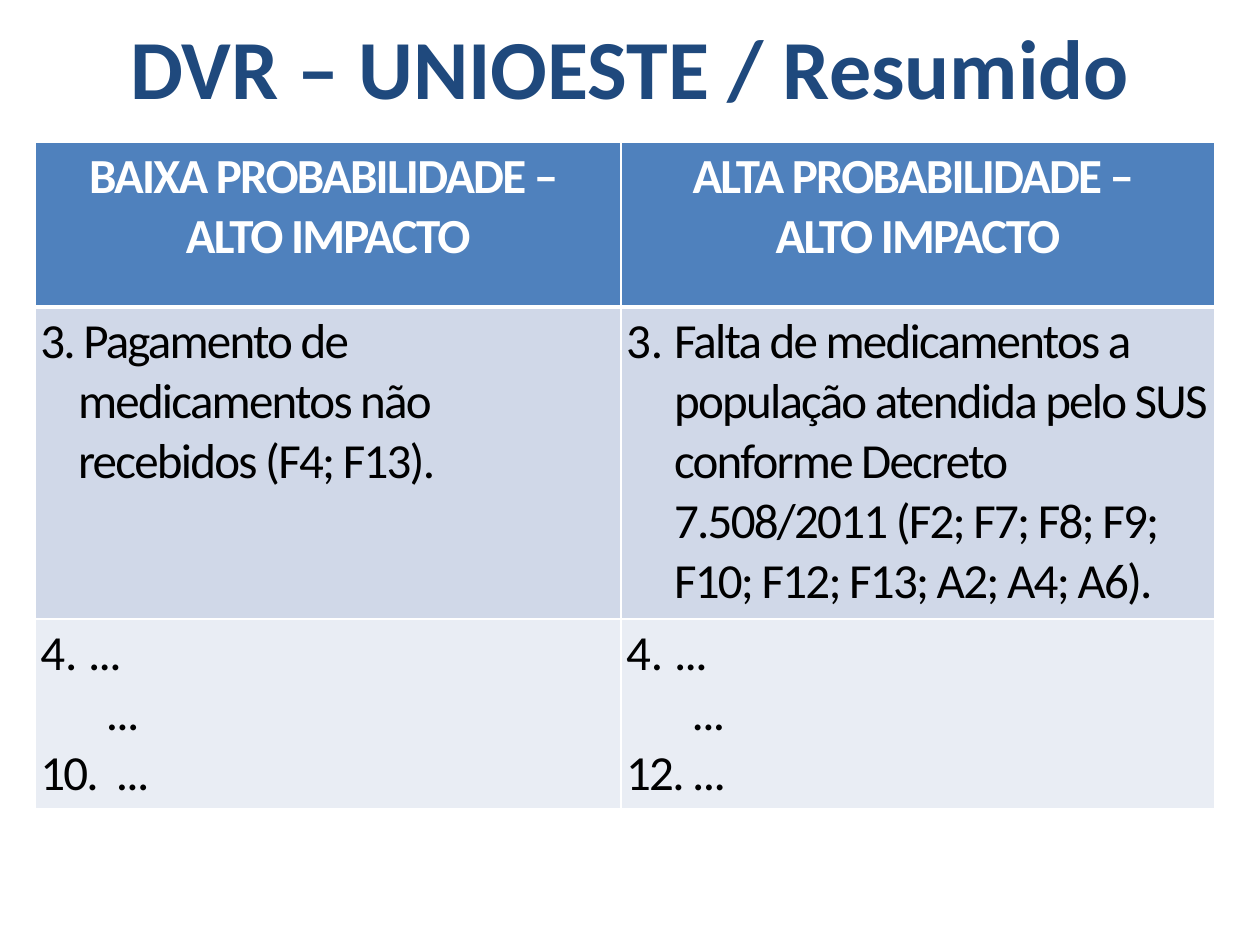
from lxml import etree
from pptx import Presentation
from pptx.dml.color import RGBColor
from pptx.enum.text import MSO_ANCHOR, PP_ALIGN
from pptx.oxml.ns import qn
from pptx.util import Inches, Pt

MIDDLE = MSO_ANCHOR.MIDDLE
LEFT, CENTER = PP_ALIGN.LEFT, PP_ALIGN.CENTER
WIDE, HIGH = Inches(10), Inches(7.5)
HUES = {"title": "1F497D", "head": "4F81BD", "odd": "D0D8E8",
        "even": "E9EDF4", "ink": "000000", "white": "FFFFFF"}


def write(para, text, size=28, hue="ink", bold=False, align=LEFT,
          left=0, hang=0, start=None, track=0):
    para.alignment = align
    props = para._p.get_or_add_pPr()
    props.set("marL", str(Inches(left)))
    props.set("indent", str(Inches(-hang)))
    if start:
        etree.SubElement(props, qn("a:buAutoNum"),
                         type="arabicPeriod", startAt=str(start))
    run = para.add_run()
    run.text = text
    font = run.font
    font.name, font.size, font.bold = "Calibri", Pt(size), bold
    font.color.rgb = RGBColor.from_string(HUES[hue])
    if track:
        run._r.get_or_add_rPr().set("spc", str(track))


class Deck:
    def __init__(self):
        self.prs = Presentation()
        self.prs.slide_width, self.prs.slide_height = WIDE, HIGH
        self.slide = self.prs.slides.add_slide(self.prs.slide_layouts[5])

    def title(self, text, x, y, w, h):
        box = self.slide.shapes.title
        box.left, box.top = int(x * WIDE), int(y * HIGH)
        box.width, box.height = int(w * WIDE), int(h * HIGH)
        box.text_frame.vertical_anchor = MIDDLE
        write(box.text_frame.paragraphs[0], text, size=48, hue="title",
              bold=True, align=CENTER)

    def edge(self, cell, widths):
        props = cell._tc.get_or_add_tcPr()
        for spot, (side, width) in enumerate(widths.items()):
            line = etree.Element(qn("a:ln" + side), w=str(Pt(width)))
            fill = etree.SubElement(line, qn("a:solidFill"))
            etree.SubElement(fill, qn("a:srgbClr"), val=HUES["white"])
            props.insert(spot, line)

    def cell(self, cell, lines, fill, widths, **style):
        cell.fill.solid()
        cell.fill.fore_color.rgb = RGBColor.from_string(HUES[fill])
        cell.margin_left = cell.margin_right = Inches(0.04)
        cell.margin_top = cell.margin_bottom = Inches(0.04)
        self.edge(cell, widths)
        frame = cell.text_frame
        for spot, (text, form) in enumerate(lines):
            para = frame.add_paragraph() if spot else frame.paragraphs[0]
            write(para, text, track=-100, **style, **form)

    def table(self, rows, x, y, cols, highs):
        grid = self.slide.shapes.add_table(
            len(rows), len(cols), int(x * WIDE), int(y * HIGH),
            int(sum(cols) * WIDE), int(sum(highs) * HIGH)).table
        for col, share in zip(grid.columns, cols):
            col.width = int(share * WIDE)
        for r, (row, share) in enumerate(zip(rows, highs)):
            grid.rows[r].height = int(share * HIGH)
            fill = ("head", "odd", "even")[r]
            style = {}
            if r == 0:
                style = {"hue": "white", "bold": True, "align": CENTER}
            widths = {"L": 1, "R": 1, "T": 3 if r == 1 else 1,
                      "B": 3 if r == 0 else 1}
            for c, lines in enumerate(row):
                self.cell(grid.cell(r, c), lines, fill, widths, **style)


def count(start):
    return {"left": 0.38, "hang": 0.38, "start": start}


def main():
    deck = Deck()
    deck.title("DVR – UNIOESTE / Resumido", 0, 0.02, 1, 0.1)
    inset, dots = {"left": 0.3}, ("...", {"left": 0.52})
    heads = [[(f"{odds} PROBABILIDADE – ", {}), ("ALTO IMPACTO", {})]
             for odds in ("BAIXA", "ALTA")]
    risks = [
        [("3. Pagamento de", {}), ("medicamentos não", inset),
         ("recebidos (F4; F13).", inset)],
        [("Falta de medicamentos a população atendida pelo SUS conforme "
          "Decreto 7.508/2011 (F2; F7; F8; F9; F10; F12; F13; A2; A4; A6).",
          count(3))],
    ]
    rest = [[("...", count(4)), dots, last] for last in
            (("10.\t...", {"left": 0.6, "hang": 0.6}), ("12. ...", {}))]
    deck.table([heads, risks, rest], 0.028, 0.15,
               (0.465, 0.471), (0.175, 0.33, 0.2))
    deck.prs.save("out.pptx")


if __name__ == "__main__":
    main()
